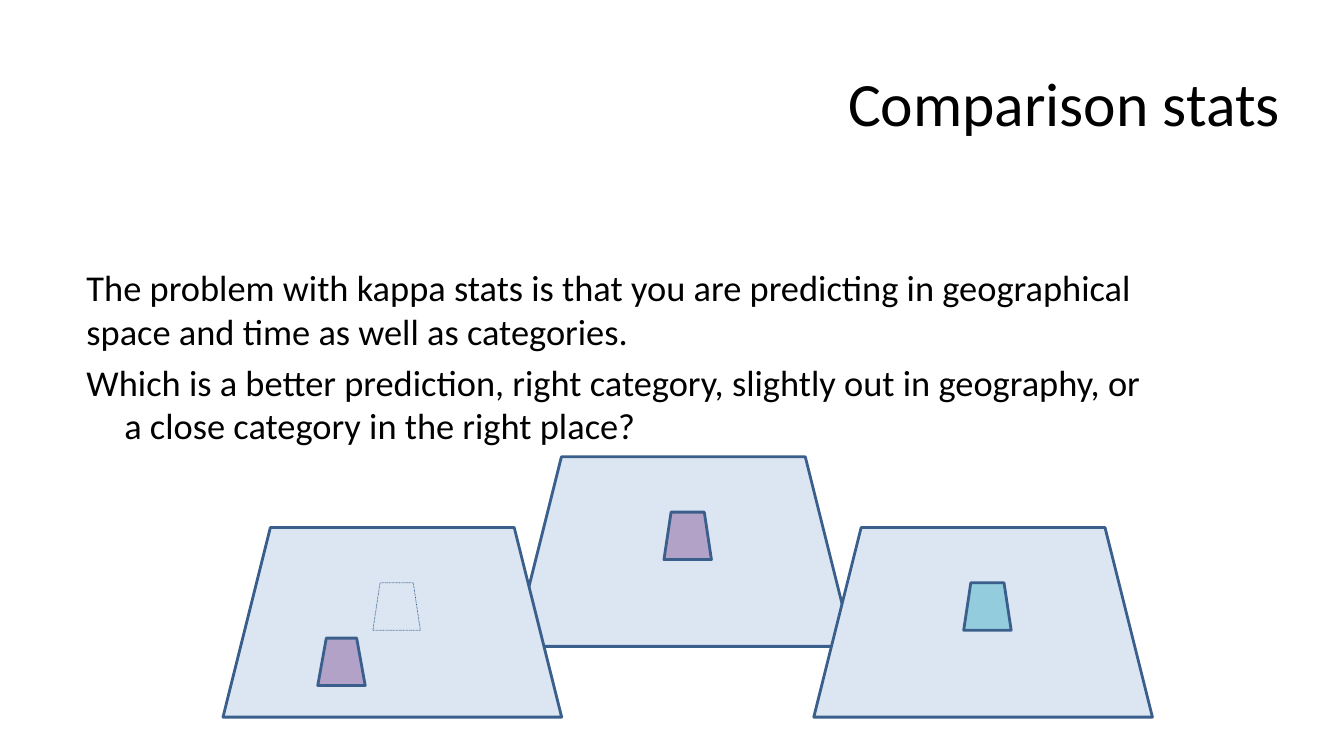
from pptx import Presentation
from pptx.dml.color import RGBColor
from pptx.enum.dml import MSO_LINE
from pptx.enum.shapes import MSO_SHAPE
from pptx.enum.text import MSO_ANCHOR, PP_ALIGN
from pptx.util import Pt

TRAPEZOID = MSO_SHAPE.TRAPEZOID
DOTTED = MSO_LINE.ROUND_DOT
MIDDLE, TOP = MSO_ANCHOR.MIDDLE, MSO_ANCHOR.TOP
LEFT, RIGHT = PP_ALIGN.LEFT, PP_ALIGN.RIGHT

COLOURS = {"text": "000000", "map": "DCE6F2", "outline": "3A5F8C",
           "category": "B3A2C7", "close": "93CDDD"}
FONT = "Calibri"

# Each paragraph: text, hanging indent
TITLE = [("Comparison stats", 0)]
BODY = [
    ("The problem with kappa stats is that you are predicting in "
     "geographical space and time as well as categories.", 0),
    ("Which is a better prediction, right category, slightly out in "
     "geography, or a close category in the right place?", 27),
]

MAP_SIZE = (241.9, 135.4)
CELL_SIZE = (33.9, 33.9)
TRUE_PLACE = (107.1, 39.5)
WRONG_PLACE = (67.7, 79)
MAP_ADJ, CELL_ADJ, MOVED_ADJ = 0.25, 0.15, 0.18

# Each map: left, top, cells (offset, fill, adjustment)
MAPS = [
    (367.2, 326.3, [(TRUE_PLACE, "category", CELL_ADJ)]),
    (581.3, 376.8, [(TRUE_PLACE, "close", CELL_ADJ)]),
    (159.3, 376.8, [(TRUE_PLACE, None, CELL_ADJ),
                    (WRONG_PLACE, "category", MOVED_ADJ)]),
]


def rgb(name):
    return RGBColor.from_string(COLOURS[name])


def add_text(s, box, paragraphs, size, align, anchor, before=0):
    tf = s.shapes.add_textbox(*map(Pt, box)).text_frame
    tf.word_wrap = True
    tf.vertical_anchor = anchor
    for i, (text, hanging) in enumerate(paragraphs):
        p = tf.add_paragraph() if i else tf.paragraphs[0]
        p.alignment = align
        p.space_before = Pt(before)
        if hanging:
            pPr = p._p.get_or_add_pPr()
            pPr.set("marL", str(Pt(hanging)))
            pPr.set("indent", str(-Pt(hanging)))
        r = p.add_run()
        r.text = text
        for key, value in {"name": FONT, "size": Pt(size)}.items():
            setattr(r.font, key, value)
        r.font.color.rgb = rgb("text")


def add_trapezoid(s, left, top, size, fill, adj):
    """Draw a trapezoid; without a fill it is a thin dotted outline."""
    sp = s.shapes.add_shape(TRAPEZOID, *map(Pt, (left, top, *size)))
    sp.shadow.inherit = False
    sp.adjustments[0] = adj
    sp.line.color.rgb = rgb("outline")
    if fill:
        sp.fill.solid()
        sp.fill.fore_color.rgb = rgb(fill)
        sp.line.width = Pt(2)
    else:
        sp.fill.background()
        sp.line.width = Pt(0.5)
        sp.line.dash_style = DOTTED


prs = Presentation()
prs.slide_width, prs.slide_height = Pt(960), Pt(540)
s = prs.slides.add_slide(prs.slide_layouts[6])

add_text(s, (309.6, 28.1, 612, 90), TITLE, 44, RIGHT, MIDDLE)
add_text(s, (54.7, 185.8, 768.2, 337.7), BODY, 26, LEFT, TOP, before=5.2)

for left, top, cells in MAPS:
    add_trapezoid(s, left, top, MAP_SIZE, "map", MAP_ADJ)
    for (dx, dy), fill, adj in cells:
        add_trapezoid(s, left + dx, top + dy, CELL_SIZE, fill, adj)

prs.save("out.pptx")
